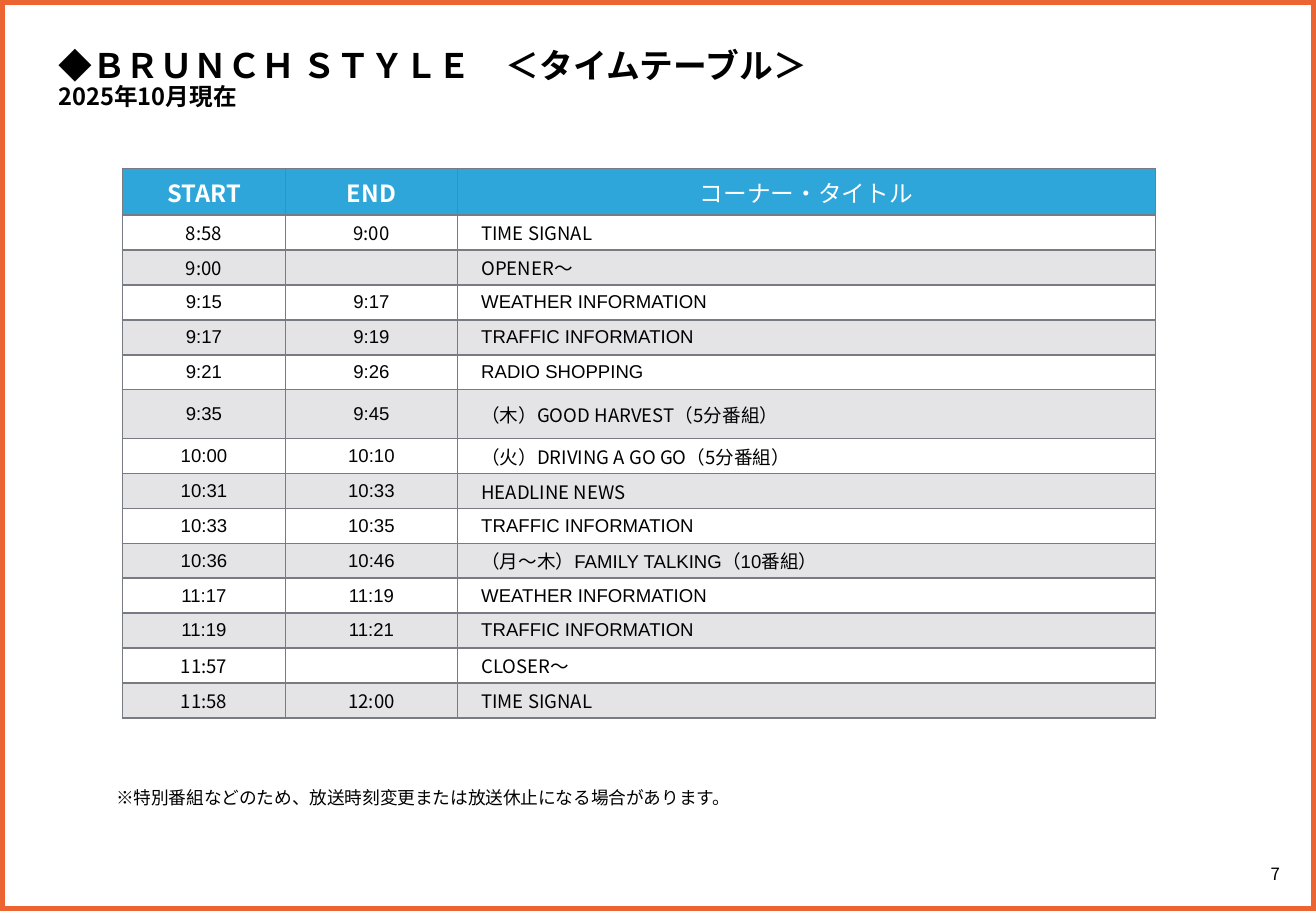
import pptx
import pptx.dml.color
import pptx.enum.shapes
import pptx.enum.text
import pptx.oxml.ns
import pptx.util
from lxml import etree

Cm = pptx.util.Cm
Pt = pptx.util.Pt
ALIGN = pptx.enum.text.PP_ALIGN
ANCHOR = pptx.enum.text.MSO_ANCHOR

NOTO, ARIAL = "Noto Sans CJK JP", "Arial"
BLACK, WHITE, ORANGE = "000000", "FFFFFF", "EB6432"
BLUE, GRAY, STRIPE = "2EA6DA", "797B84", "E4E4E6"

TITLE = "◆ＢＲＵＮＣＨ ＳＴＹＬＥ　＜タイムテーブル＞"
DATE = "2025年10月現在"
NOTE = "※特別番組などのため、放送時刻変更または放送休止になる場合があります。"
PAGE = "7"
HEADER = [("START", NOTO, True), ("END", NOTO, True), ("コーナー・タイトル", ARIAL, False)]
PROGRAM = [
    ("8:58", "9:00", "TIME SIGNAL", NOTO, NOTO),
    ("9:00", "", "OPENER〜", NOTO, NOTO),
    ("9:15", "9:17", "WEATHER INFORMATION", ARIAL, ARIAL),
    ("9:17", "9:19", "TRAFFIC INFORMATION", ARIAL, ARIAL),
    ("9:21", "9:26", "RADIO SHOPPING", ARIAL, ARIAL),
    ("9:35", "9:45", "（木）GOOD HARVEST（5分番組）", ARIAL, NOTO),
    ("10:00", "10:10", "（火）DRIVING A GO GO（5分番組）", ARIAL, NOTO),
    ("10:31", "10:33", "HEADLINE NEWS", ARIAL, NOTO),
    ("10:33", "10:35", "TRAFFIC INFORMATION", ARIAL, ARIAL),
    ("10:36", "10:46", "（月〜木）FAMILY TALKING（10番組）", ARIAL, ARIAL),
    ("11:17", "11:19", "WEATHER INFORMATION", ARIAL, ARIAL),
    ("11:19", "11:21", "TRAFFIC INFORMATION", ARIAL, ARIAL),
    ("11:57", "", "CLOSER～", NOTO, NOTO),
    ("11:58", "12:00", "TIME SIGNAL", NOTO, NOTO),
]
COLUMN_WIDTHS = [3.41, 3.59, 14.6]
HEADER_HEIGHT, ROW_HEIGHT, TALL_HEIGHT, TALL_ROW = 0.98, 0.73, 1.02, 6


def color(value):
    return pptx.dml.color.RGBColor.from_string(value)


def write(paragraph, text, size, font_name=NOTO, bold=False, ink=BLACK, align=ALIGN.LEFT):
    paragraph.text = text
    paragraph.alignment = align
    font = paragraph.font
    font.size, font.bold, font.name = Pt(size), bold, font_name
    font.color.rgb = color(ink)
    east_asian = etree.SubElement(font._rPr, pptx.oxml.ns.qn("a:ea"))
    east_asian.set("typeface", NOTO)


def add_text_box(slide, left, top, width, height, anchor=ANCHOR.TOP):
    box = slide.shapes.add_textbox(Cm(left), Cm(top), Cm(width), Cm(height))
    box.text_frame.word_wrap = True
    box.text_frame.vertical_anchor = anchor
    return box.text_frame


def add_borders(cell):
    properties = cell._tc.get_or_add_tcPr()
    for position, side in enumerate(("lnL", "lnR", "lnT", "lnB")):
        line = etree.Element(pptx.oxml.ns.qn("a:" + side), w=str(Pt(1)))
        fill = etree.SubElement(line, pptx.oxml.ns.qn("a:solidFill"))
        etree.SubElement(fill, pptx.oxml.ns.qn("a:srgbClr"), val=GRAY)
        properties.insert(position, line)


def fill_cell(cell, fill, text, size, font_name, bold, ink, align):
    cell.margin_top = cell.margin_bottom = cell.margin_right = 0
    cell.margin_left = Cm(0.5) if align == ALIGN.LEFT else 0
    cell.vertical_anchor = ANCHOR.MIDDLE
    cell.fill.solid()
    cell.fill.fore_color.rgb = color(fill)
    add_borders(cell)
    write(cell.text_frame.paragraphs[0], text, size, font_name, bold, ink, align)


def add_timetable(slide):
    heights = [HEADER_HEIGHT] + [ROW_HEIGHT] * len(PROGRAM)
    heights[TALL_ROW] = TALL_HEIGHT
    table = slide.shapes.add_table(
        len(heights), len(COLUMN_WIDTHS), Cm(2.56), Cm(3.52),
        Cm(sum(COLUMN_WIDTHS)), Cm(sum(heights))).table
    for column, width in zip(table.columns, COLUMN_WIDTHS):
        column.width = Cm(width)
    for row, height in zip(table.rows, heights):
        row.height = Cm(height)
    for column, (text, font_name, bold) in enumerate(HEADER):
        fill_cell(table.cell(0, column), BLUE, text, 14, font_name, bold, WHITE, ALIGN.CENTER)
    for row, (start, end, corner, time_font, corner_font) in enumerate(PROGRAM, 1):
        fill = WHITE if row % 2 else STRIPE
        cells = [(start, time_font, ALIGN.CENTER), (end, time_font, ALIGN.CENTER),
                 (corner, corner_font, ALIGN.LEFT)]
        for column, (text, font_name, align) in enumerate(cells):
            fill_cell(table.cell(row, column), fill, text, 11, font_name, False, BLACK, align)


def main():
    presentation = pptx.Presentation()
    presentation.slide_width, presentation.slide_height = Cm(27.51), Cm(19.05)
    slide = presentation.slides.add_slide(presentation.slide_layouts[6])

    frame = slide.shapes.add_shape(
        pptx.enum.shapes.MSO_SHAPE.RECTANGLE, 0, 0,
        presentation.slide_width, presentation.slide_height)
    frame.shadow.inherit = False
    frame.fill.background()
    frame.line.color.rgb = color(ORANGE)
    frame.line.width = Pt(6)

    heading = add_text_box(slide, 0.97, 0.74, 17.81, 1.12)
    title, date = heading.paragraphs[0], heading.add_paragraph()
    write(title, TITLE, 20, bold=True)
    write(date, DATE, 14, bold=True)
    title.line_spacing, date.line_spacing = Pt(26), Pt(15)

    add_timetable(slide)

    note = add_text_box(slide, 2.18, 16.33, 21.89, 0.71)
    write(note.paragraphs[0], NOTE, 10.5)
    page = add_text_box(slide, 25.81, 17.83, 1.7, 0.89, ANCHOR.MIDDLE)
    write(page.paragraphs[0], PAGE, 10, align=ALIGN.CENTER)

    presentation.save("out.pptx")


if __name__ == "__main__":
    main()
